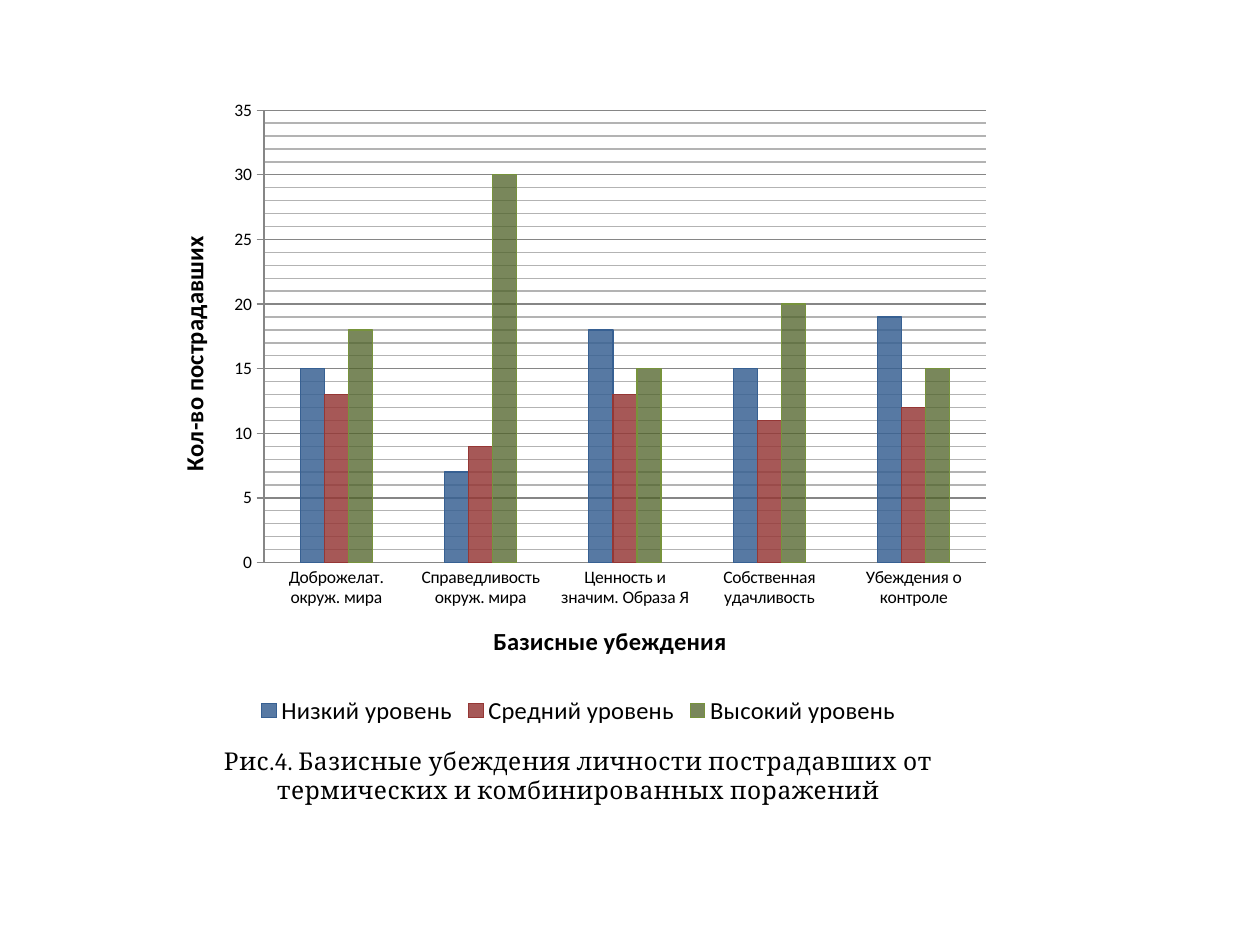
"""Build a slide with a clustered column chart of basic beliefs and its caption."""
from dataclasses import dataclass
from typing import Any

from lxml import etree
from pptx import Presentation
from pptx.chart.data import CategoryChartData
from pptx.dml.color import RGBColor
from pptx.enum.chart import XL_CHART_TYPE, XL_LEGEND_POSITION, XL_TICK_MARK
from pptx.enum.text import MSO_ANCHOR, PP_ALIGN
from pptx.oxml.ns import qn
from pptx.util import Inches, Pt

COLUMNS = XL_CHART_TYPE.COLUMN_CLUSTERED
BOTTOM = XL_LEGEND_POSITION.BOTTOM
TICK_NONE, TICK_OUT = XL_TICK_MARK.NONE, XL_TICK_MARK.OUTSIDE
CENTER, TOP = PP_ALIGN.CENTER, MSO_ANCHOR.TOP

COLORS = {
    "text": "000000",
    "axis": "868686",
    "minor": "B3B3B3",
    "low": "376092",
    "middle": "953735",
    "high": "4F6228",
    "low_edge": "376092",
    "middle_edge": "953735",
    "high_edge": "77933C",
}
LEFT, WIDTH = Inches(1.22), Inches(6.74)
PLOT_LAYOUT = {"x": 0.13, "y": 0.04, "w": 0.85, "h": 0.7}
CAPTION = (
    "Рис.4. Базисные убеждения личности пострадавших от "
    "термических и комбинированных поражений"
)
BELIEFS = [
    "Доброжелат. окруж. мира",
    "Справедливость окруж. мира",
    "Ценность и значим. Образа Я",
    "Собственная удачливость",
    "Убеждения о контроле",
]


@dataclass
class Level:
    """One level of belief with its counts and fill."""

    name: str
    counts: list[int]
    color: str
    opacity: int


LEVELS = [
    Level("Низкий уровень", [15, 7, 18, 15, 19], "low", 84),
    Level("Средний уровень", [13, 9, 13, 11, 12], "middle", 83),
    Level("Высокий уровень", [18, 30, 15, 20, 15], "high", 76),
]


def rgb(key: str) -> RGBColor:
    """Return the named colour."""
    return RGBColor.from_string(COLORS[key])


def apply(target: Any, values: dict[str, Any]) -> None:
    """Set each attribute of the target."""
    for attribute, value in values.items():
        setattr(target, attribute, value)


def style_font(font: Any, size: int, name: str = "Calibri", bold: bool = False) -> None:
    """Set face, size, weight and black colour."""
    apply(font, {"name": name, "size": Pt(size), "bold": bold})
    font.color.rgb = rgb("text")


def style_line(line: Any, color: str, width: float = 0.75) -> None:
    """Set a solid line."""
    line.color.rgb = rgb(color)
    line.width = Pt(width)


def style_axis(axis: Any, title: str, values: dict[str, Any]) -> None:
    """Set the title, line and scale of an axis."""
    apply(axis, values)
    style_line(axis.format.line, "axis")
    style_font(axis.tick_labels.font, 10)
    axis.axis_title.text_frame.text = title
    style_font(axis.axis_title.text_frame.paragraphs[0].runs[0].font, 14, bold=True)


def style_minor_gridlines(axis: Any) -> None:
    """Colour the minor gridlines of an axis."""
    gridlines = axis._element.find(qn("c:minorGridlines"))
    properties = etree.SubElement(gridlines, qn("c:spPr"))
    line = etree.SubElement(properties, qn("a:ln"), w=str(Pt(0.75)))
    fill = etree.SubElement(line, qn("a:solidFill"))
    etree.SubElement(fill, qn("a:srgbClr"), val=COLORS["minor"])


def style_series(series: Any, level: Level) -> None:
    """Give a series its translucent fill and edge."""
    fill = series.format.fill
    fill.solid()
    fill.fore_color.rgb = rgb(level.color)
    fill_color = next(series._element.iter(qn("a:srgbClr")))
    etree.SubElement(fill_color, qn("a:alpha"), val=str(level.opacity * 1000))
    style_line(series.format.line, f"{level.color}_edge")


def place_plot(chart: Any) -> None:
    """Fix the inner plot area within the chart."""
    plot_area = next(chart._chartSpace.iter(qn("c:plotArea")))
    for previous in plot_area.findall(qn("c:layout")):
        plot_area.remove(previous)
    layout = etree.Element(qn("c:layout"))
    manual = etree.SubElement(layout, qn("c:manualLayout"))
    settings = {"layoutTarget": "inner", "xMode": "edge", "yMode": "edge", **PLOT_LAYOUT}
    for tag, value in settings.items():
        etree.SubElement(manual, qn(f"c:{tag}"), val=str(value))
    plot_area.insert(0, layout)


def add_beliefs_chart(slide: Any) -> None:
    """Add the column chart of belief levels."""
    data = CategoryChartData()
    data.categories = BELIEFS
    for level in LEVELS:
        data.add_series(level.name, level.counts)
    chart = slide.shapes.add_chart(
        COLUMNS, LEFT, Inches(0.67), WIDTH, Inches(5.13), data
    ).chart
    apply(chart, {"has_title": False, "has_legend": True})
    style_font(chart.font, 10)
    apply(chart.legend, {"position": BOTTOM, "include_in_layout": False})
    style_font(chart.legend.font, 14)

    plot = chart.plots[0]
    apply(plot, {"gap_width": 300, "overlap": 0, "vary_by_categories": False})
    for series, level in zip(plot.series, LEVELS):
        style_series(series, level)

    style_axis(chart.category_axis, "Базисные убеждения", {"major_tick_mark": TICK_NONE})
    counts = chart.value_axis
    style_axis(counts, "Кол-во пострадавших", {
        "minimum_scale": 0,
        "maximum_scale": 35,
        "major_unit": 5,
        "minor_unit": 1,
        "major_tick_mark": TICK_OUT,
        "minor_tick_mark": TICK_NONE,
        "has_major_gridlines": True,
        "has_minor_gridlines": True,
    })
    style_line(counts.major_gridlines.format.line, "axis")
    style_minor_gridlines(counts)
    place_plot(chart)


def add_caption(slide: Any) -> None:
    """Add the figure caption under the chart."""
    frame = slide.shapes.add_textbox(LEFT, Inches(5.87), WIDTH, Inches(0.88)).text_frame
    apply(frame, {"word_wrap": True, "vertical_anchor": TOP})
    paragraph = frame.paragraphs[0]
    paragraph.alignment = CENTER
    run = paragraph.add_run()
    run.text = CAPTION
    style_font(run.font, 14, "Cambria")
    run._r.get_or_add_rPr().set("spc", "30")


def main() -> None:
    """Build and save the slide."""
    deck = Presentation()
    apply(deck, {"slide_width": Inches(10), "slide_height": Inches(7.5)})
    slide = deck.slides.add_slide(deck.slide_layouts[6])
    add_caption(slide)
    add_beliefs_chart(slide)
    deck.save("out.pptx")


if __name__ == "__main__":
    main()
